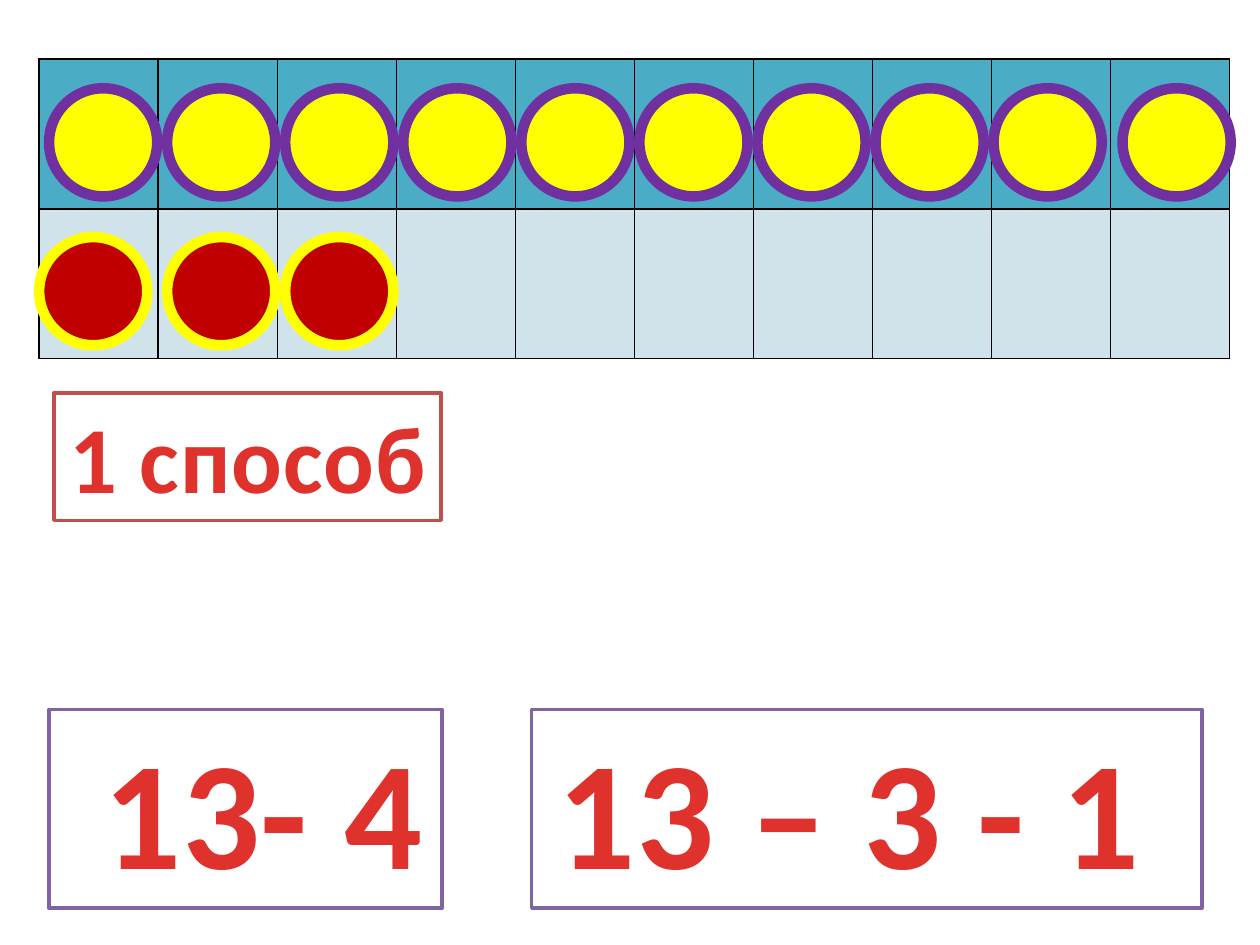
"""Build a counting slide with a ten-column grid, counters and sums."""
from dataclasses import dataclass

from lxml import etree
from pptx import Presentation
from pptx.dml.color import RGBColor
from pptx.enum import shapes, text
from pptx.oxml import ns
from pptx.util import Cm, Pt


@dataclass(frozen=True)
class Theme:
    font: str = "Calibri"
    ink: str = "E0322D"
    paper: str = "FFFFFF"
    edge: str = "000000"
    rows: tuple = ("4BACC6", "D0E3EA")
    yellow: str = "FFFF00"
    red: str = "C00000"
    purple: str = "7030A0"
    sum_line: str = "8064A2"
    title_line: str = "C0504D"
    title: int = 54
    sum: int = 88


@dataclass(frozen=True)
class Disc:
    left: float
    top: float
    fill: str
    line: str


@dataclass(frozen=True)
class Label:
    words: str
    left: float
    top: float
    width: float
    height: float
    line: str
    size: int


THEME = Theme()
COLS = 10
STEP = 2.38
FIRST = 0.99
UPPER = [FIRST + STEP * n for n in range(COLS - 1)] + [22.63]
LOWER = [0.79] + UPPER[1:3]
DISCS = [Disc(x, 1.78, THEME.yellow, THEME.purple) for x in UPPER]
DISCS += [Disc(x, 4.78, THEME.red, THEME.yellow) for x in LOWER]
LABELS = [
    Label("1 способ", 1.09, 7.92, 7.8, 2.57, THEME.title_line, THEME.title),
    Label(" 13- 4", 0.99, 14.3, 7.92, 4.01, THEME.sum_line, THEME.sum),
    Label("13 – 3 - 1 ", 10.72, 14.3, 13.51, 4.01, THEME.sum_line, THEME.sum),
]


def rgb(code: str) -> RGBColor:
    return RGBColor.from_string(code)


def paint(shape, fill: str, line: str, width: float) -> None:
    shape.shadow.inherit = False
    shape.fill.solid()
    shape.fill.fore_color.rgb = rgb(fill)
    shape.line.color.rgb = rgb(line)
    shape.line.width = Pt(width)


def frame(cell) -> None:
    props = cell._tc.get_or_add_tcPr()
    for side in ("a:lnL", "a:lnR", "a:lnT", "a:lnB"):
        line = etree.SubElement(props, ns.qn(side), w=str(Pt(1)))
        fill = etree.SubElement(line, ns.qn("a:solidFill"))
        etree.SubElement(fill, ns.qn("a:srgbClr"), val=THEME.edge)


def draw_grid(slide) -> None:
    grid = slide.shapes.add_table(
        len(THEME.rows), COLS, Cm(0.79), Cm(1.19), Cm(24), Cm(6.04)
    ).table
    for row, tint in zip(grid.rows, THEME.rows):
        for cell in row.cells:
            frame(cell)
            cell.fill.solid()
            cell.fill.fore_color.rgb = rgb(tint)


def draw_disc(slide, disc: Disc) -> None:
    shape = slide.shapes.add_shape(
        shapes.MSO_SHAPE.OVAL, Cm(disc.left), Cm(disc.top), Cm(2.18), Cm(2.18)
    )
    paint(shape, disc.fill, disc.line, 6)


def draw_label(slide, label: Label) -> None:
    shape = slide.shapes.add_shape(
        shapes.MSO_SHAPE.RECTANGLE,
        Cm(label.left), Cm(label.top), Cm(label.width), Cm(label.height),
    )
    paint(shape, THEME.paper, label.line, 2)
    body = shape.text_frame
    body.word_wrap = False
    body.auto_size = text.MSO_AUTO_SIZE.SHAPE_TO_FIT_TEXT
    body.vertical_anchor = text.MSO_ANCHOR.TOP
    para = body.paragraphs[0]
    para.alignment = text.PP_ALIGN.CENTER
    run = para.add_run()
    run.text = label.words
    run.font.name = THEME.font
    run.font.size = Pt(label.size)
    run.font.bold = True
    run.font.color.rgb = rgb(THEME.ink)
    run._r.get_or_add_rPr().set("spc", "50")


def main() -> None:
    deck = Presentation()
    deck.slide_width, deck.slide_height = Cm(25.4), Cm(19.05)
    slide = deck.slides.add_slide(deck.slide_layouts[6])
    draw_grid(slide)
    for disc in DISCS:
        draw_disc(slide, disc)
    for label in LABELS:
        draw_label(slide, label)
    deck.save("out.pptx")


if __name__ == "__main__":
    main()
